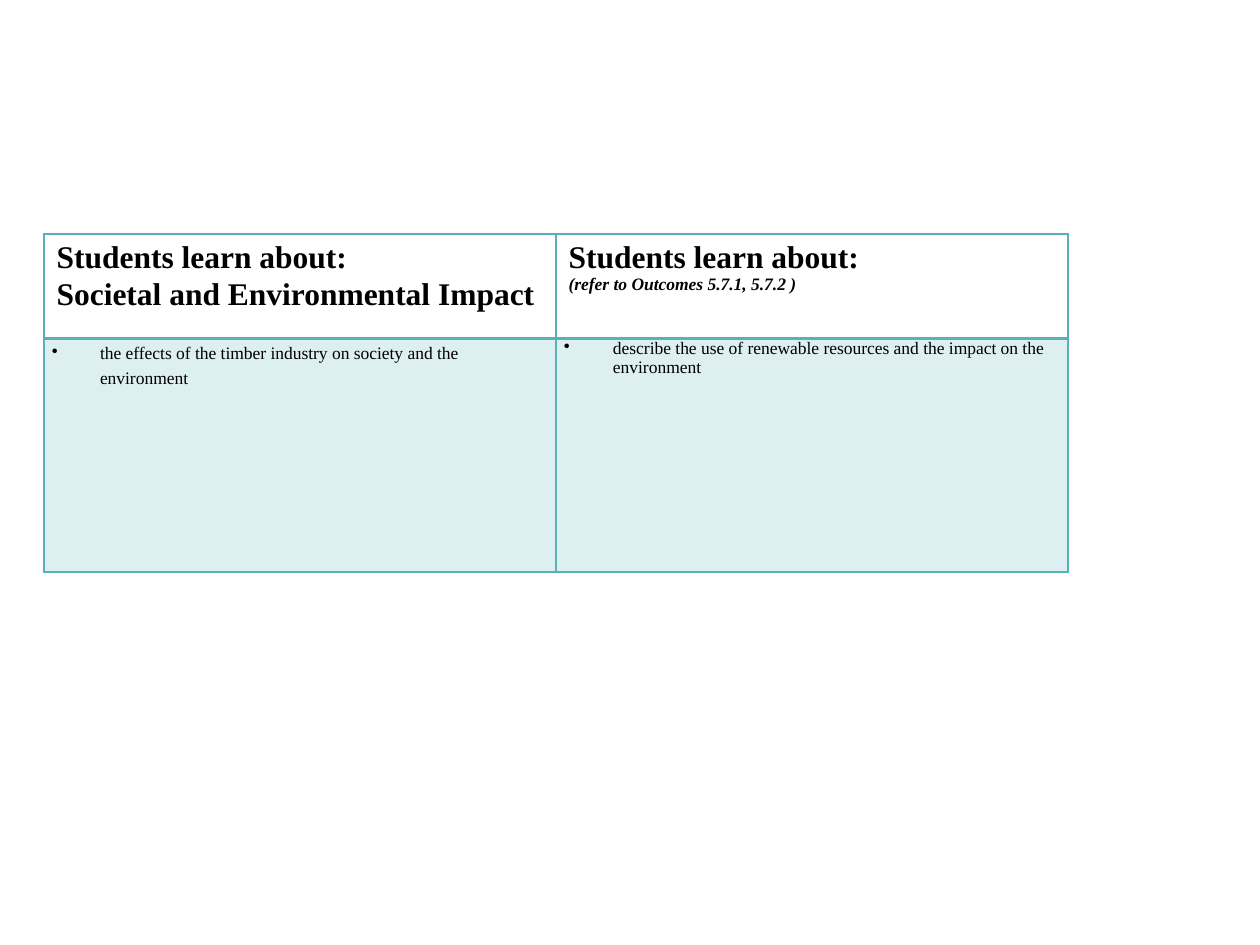
"""Build a slide with a two-column table of syllabus content and outcomes."""
from dataclasses import dataclass

from lxml.etree import SubElement
from pptx import Presentation
from pptx.dml.color import RGBColor
from pptx.oxml import parse_xml
from pptx.oxml.ns import nsdecls, qn
from pptx.util import Pt

PIXEL = 914400 // 126


@dataclass(frozen=True)
class Theme:
    """Colours, font and type sizes of the slide."""
    font: str = "Times New Roman"
    ink: str = "000000"
    teal: str = "59B0B9"
    tint: int = 20
    heading: int = 18
    body: int = 10


def px(length):
    """Turn whole pixels into EMU."""
    return length * PIXEL


def add_text(para, text, *, theme, size, bold=False, italic=False):
    """Add a formatted span to a paragraph."""
    span = para.add_run()
    span.text = text
    font = span.font
    font.name, font.size = theme.font, Pt(size)
    font.bold, font.italic = bold, italic
    font.color.rgb = RGBColor.from_string(theme.ink)


class SlideBuilder:
    """Hold the theme and the current slide."""

    def __init__(self, slide, theme):
        """Keep the slide and its theme."""
        self.slide, self.theme = slide, theme

    def table(self, left, top, columns, rows):
        """Add a plain table with the given column widths and row heights."""
        frame = self.slide.shapes.add_table(
            len(rows), len(columns), px(left), px(top), px(sum(columns)), px(sum(rows)))
        table = frame.table
        table.first_row = table.horz_banding = False
        for column, width in zip(table.columns, columns):
            column.width = px(width)
        for row, height in zip(table.rows, rows):
            row.height = px(height)
        return table

    def borders(self, cell, bottom=1):
        """Draw the four borders of a cell."""
        properties = cell._tc.get_or_add_tcPr()
        for index, (side, width) in enumerate(zip("LRTB", (1, 1, 1, bottom))):
            properties.insert(index, parse_xml(
                f'<a:ln{side} {nsdecls("a")} w="{Pt(width)}"><a:solidFill>'
                f'<a:srgbClr val="{self.theme.teal}"/></a:solidFill></a:ln{side}>'))

    def heading(self, cell, title, subtitle, space=None, **subtitle_format):
        """Fill a heading cell with a title and a second line."""
        cell.fill.background()
        self.borders(cell, bottom=2)
        add_text(cell.text_frame.paragraphs[0], title, theme=self.theme,
                 size=self.theme.heading, bold=True)
        para = cell.text_frame.add_paragraph()
        para.space_before = space
        add_text(para, subtitle, theme=self.theme, bold=True, **subtitle_format)

    def bullet(self, cell, text, indent, leading=None, tab=None):
        """Fill a tinted cell with one bulleted paragraph."""
        cell.fill.solid()
        cell.fill.fore_color.rgb = RGBColor.from_string(self.theme.teal)
        colour = cell._tc.tcPr.find(".//" + qn("a:srgbClr"))
        SubElement(colour, qn("a:alpha"), val=str(self.theme.tint * 1000))
        self.borders(cell)
        cell.margin_left = cell.margin_right = px(8)
        cell.margin_top = cell.margin_bottom = 0
        para = cell.text_frame.paragraphs[0]
        properties = para._p.get_or_add_pPr()
        properties.set("marL", str(px(indent)))
        properties.set("indent", str(-px(indent)))
        SubElement(properties, qn("a:buChar"), char="•")
        if tab:
            tabs = SubElement(properties, qn("a:tabLst"))
            SubElement(tabs, qn("a:tab"), pos=str(px(tab)), algn="l")
        para.line_spacing = leading
        add_text(para, text, theme=self.theme, size=self.theme.body)


def main():
    """Build and save the deck."""
    deck = Presentation()
    deck.slide_width, deck.slide_height = px(1260), px(945)
    theme = Theme()
    page = SlideBuilder(deck.slides.add_slide(deck.slide_layouts[6]), theme)
    table = page.table(44, 234, columns=[512, 512], rows=[105, 233])
    title = "Students learn about:"
    page.heading(table.cell(0, 0), title, "Societal and Environmental Impact",
                 space=Pt(1), size=theme.heading)
    page.heading(table.cell(0, 1), title, "(refer to Outcomes 5.7.1, 5.7.2 )",
                 size=theme.body, italic=True)
    page.bullet(table.cell(1, 0),
                "the effects of the timber industry on society and the environment",
                indent=48, leading=Pt(14), tab=32)
    page.bullet(table.cell(1, 1),
                "describe the use of renewable resources and the impact on the environment",
                indent=49)
    deck.save("out.pptx")


if __name__ == "__main__":
    main()
